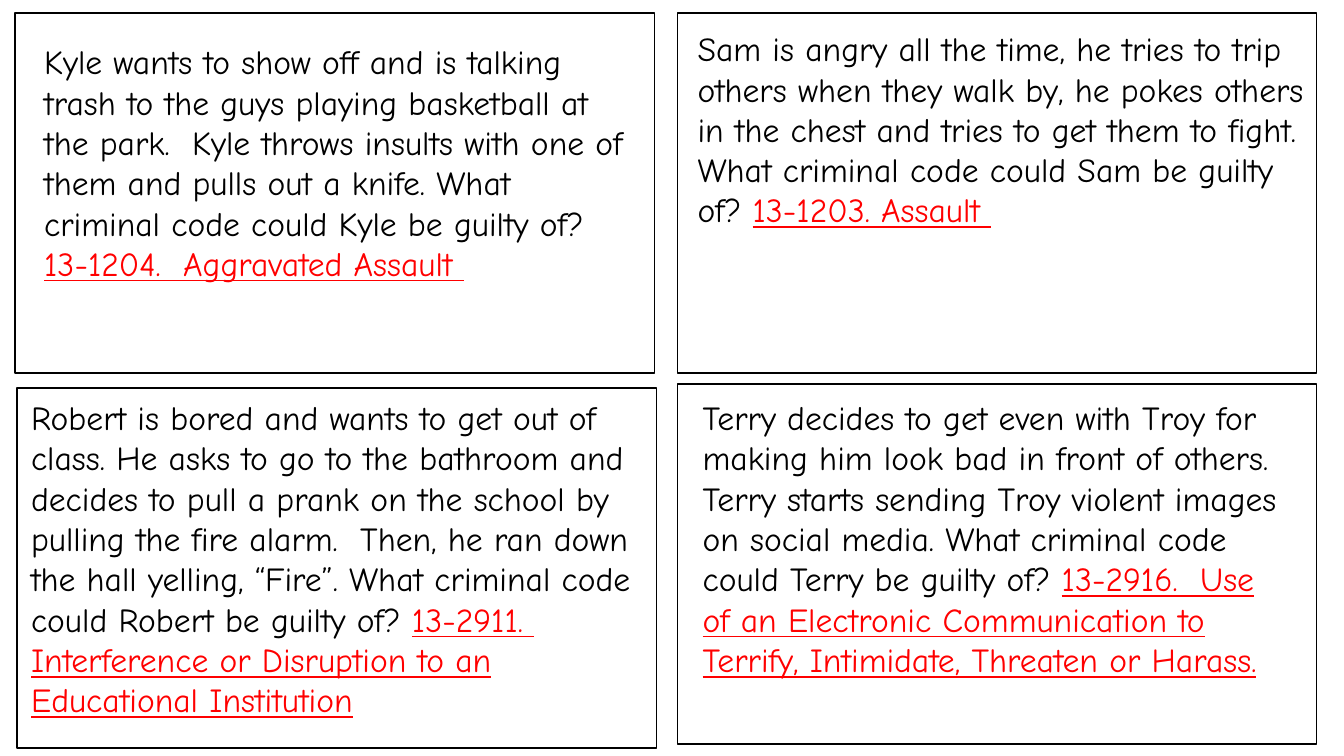
from pptx import Presentation
from pptx.dml.color import RGBColor
from pptx.enum.shapes import MSO_SHAPE as Shape
from pptx.enum.text import MSO_ANCHOR as Anchor, MSO_AUTO_SIZE as AutoSize, PP_ALIGN as Align
from pptx.util import Emu, Pt

PX = 9144  # EMU per px, 100 px to the inch
CARD_SIZE = (634, 357)

# card corner, text box, question, answer
SCENARIOS = [
    ((15, 13), (34, 36, 596, 333),
     "Kyle wants to show off and is talking trash to the guys playing basketball at "
     "the park.  Kyle throws insults with one of them and pulls out a knife. What "
     "criminal code could Kyle be guilty of? ",
     "13-1204.  Aggravated Assault "),
    ((672, 13), (682, 23, 624, 293),
     "Sam is angry all the time, he tries to trip others when they walk by, he pokes "
     "others in the chest and tries to get them to fight. What criminal code could "
     "Sam be guilty of? ",
     "13-1203. Assault "),
    ((17, 385), (21, 389, 644, 374),
     "Robert is bored and wants to get out of class. He asks to go to the bathroom and "
     "decides to pull a prank on the school by pulling the fire alarm.  Then, he ran "
     "down the hall yelling, “Fire”. What criminal code could Robert be guilty of? ",
     "13-2911.  Interference or Disruption to an Educational Institution"),
    ((672, 381), (687, 389, 595, 333),
     "Terry decides to get even with Troy for making him look bad in front of others.  "
     "Terry starts sending Troy violent images on social media. What criminal code "
     "could Terry be guilty of? ",
     "13-2916.  Use of an Electronic Communication to Terrify, Intimidate, Threaten "
     "or Harass."),
]


def px(*lengths):
    return [Emu(length * PX) for length in lengths]


def color(hex_code):
    return RGBColor.from_string(hex_code)


def add_card(page, corner):
    card = page.shapes.add_shape(Shape.RECTANGLE, *px(*corner, *CARD_SIZE))
    card.shadow.inherit = False
    card.fill.solid()
    card.fill.fore_color.rgb = color("FFFFFF")
    card.line.color.rgb = color("000000")
    card.line.width = Pt(1)


def add_span(para, text, hex_code, underline=False):
    span = para.add_run()
    span.text = text
    span.font.name = "Comic Neue"
    span.font.size = Pt(24)
    span.font.color.rgb = color(hex_code)
    span.font.underline = underline


def add_scenario(page, area, question, answer):
    frame = page.shapes.add_textbox(*px(*area)).text_frame
    frame.word_wrap = True
    frame.auto_size = AutoSize.NONE
    frame.vertical_anchor = Anchor.TOP
    para = frame.paragraphs[0]
    para.alignment = Align.LEFT
    add_span(para, question, "000000")
    add_span(para, answer, "FF0000", underline=True)


def main():
    deck = Presentation()
    deck.slide_width, deck.slide_height = px(1333, 750)
    page = deck.slides.add_slide(deck.slide_layouts[6])
    for corner, area, question, answer in SCENARIOS:
        add_card(page, corner)
        add_scenario(page, area, question, answer)
    deck.save("out.pptx")


if __name__ == "__main__":
    main()
